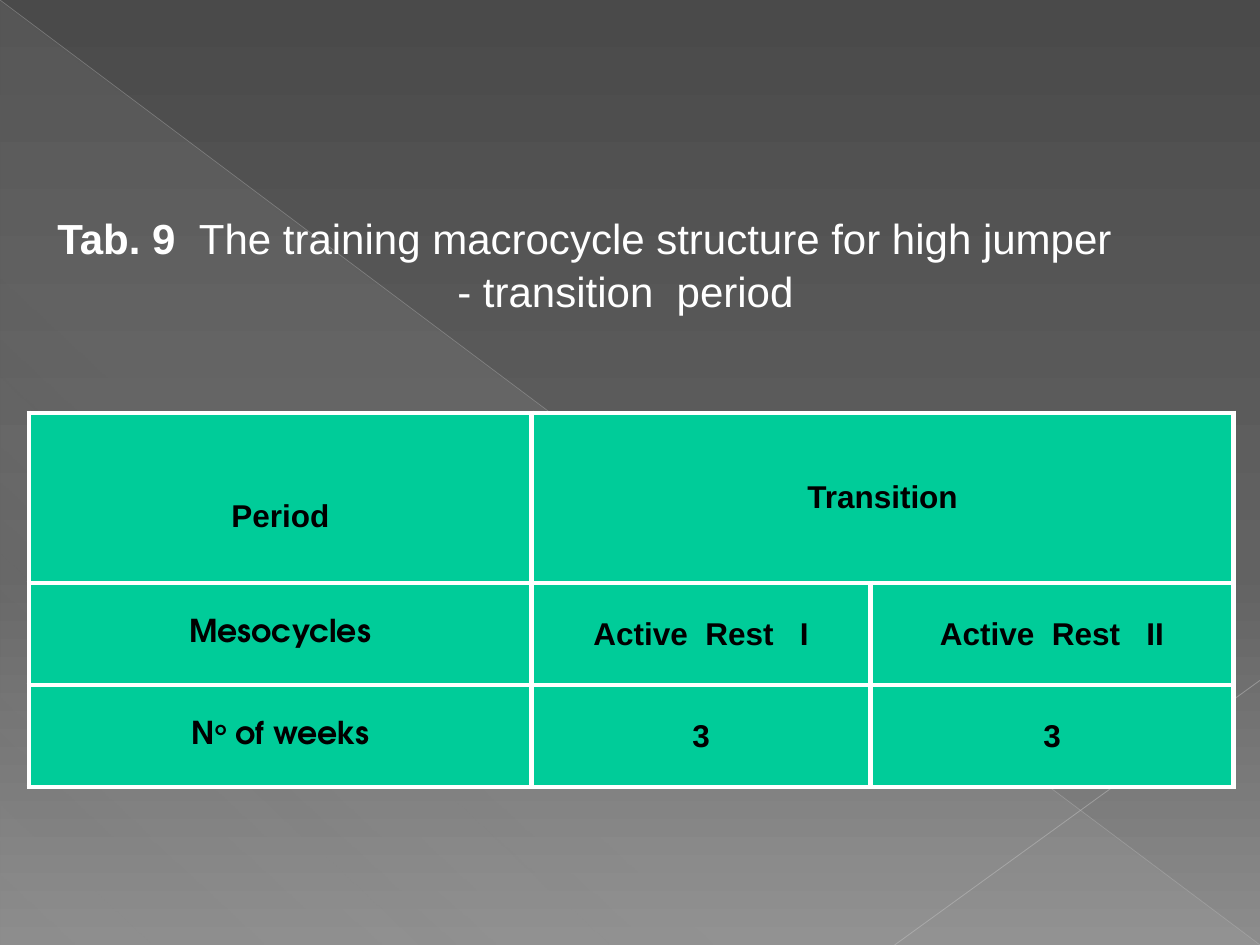
from dataclasses import dataclass
from lxml import etree
from pptx import Presentation, util as u
from pptx.dml.color import RGBColor
from pptx.enum import shapes, text
from pptx.oxml.ns import qn

WIDTH, HEIGHT = 10, 7.5
COLORS = {
    "top": "4A4A4A", "middle": "626262", "bottom": "8C8C8C",
    "veil": "D2D2D2", "diagonal": "BFBFBF", "corner": "C6C6C6",
    "cell": "00CC99", "white": "FFFFFF", "black": "000000",
}


@dataclass
class SlideBuilder:
    slide: object
    body_font: str = "Arial"
    label_font: str = "TeX Gyre Adventor"

    def x(self, share):
        return u.Inches(WIDTH * share)

    def y(self, share):
        return u.Inches(HEIGHT * share)

    def color(self, name):
        return RGBColor.from_string(COLORS[name])

    def alpha(self, color_element, percent):
        etree.SubElement(color_element, qn("a:alpha"), val=str(percent * 1000))

    def gradient(self, fill, element, stops, angle):
        fill.gradient()
        gradient = next(element.iter(qn("a:gradFill")))
        stop_list = gradient.find(qn("a:gsLst"))
        for stop in list(stop_list):
            stop_list.remove(stop)
        for position, name, opacity in stops:
            stop = etree.SubElement(stop_list, qn("a:gs"), pos=str(position * 1000))
            color = etree.SubElement(stop, qn("a:srgbClr"), val=COLORS[name])
            if opacity < 100:
                self.alpha(color, opacity)
        gradient.find(qn("a:lin")).set("ang", str(angle * 60000))

    def background(self, stops, angle):
        self.gradient(self.slide.background.fill, self.slide._element, stops, angle)

    def triangle(self, left, top, width, height, stops, angle):
        shape = self.slide.shapes.add_shape(
            shapes.MSO_SHAPE.RIGHT_TRIANGLE,
            self.x(left), self.y(top), self.x(width), self.y(height))
        shape.shadow.inherit = False
        shape.line.fill.background()
        self.gradient(shape.fill, shape._element, stops, angle)

    def line(self, start, end, name, width, opacity):
        connector = self.slide.shapes.add_connector(
            shapes.MSO_CONNECTOR.STRAIGHT,
            self.x(start[0]), self.y(start[1]), self.x(end[0]), self.y(end[1]))
        connector.line.color.rgb = self.color(name)
        connector.line.width = u.Pt(width)
        properties = connector._element.spPr
        self.alpha(next(properties.iter(qn("a:srgbClr"))), opacity)
        etree.SubElement(properties, qn("a:effectLst"))

    def run(self, paragraph, words, size, name, bold, font=None, raised=False):
        run = paragraph.add_run()
        run.text = words
        run.font.size = u.Pt(size)
        run.font.name = font or self.body_font
        run.font.bold = bold
        run.font.color.rgb = self.color(name)
        if raised:
            run.font._element.set("baseline", "30000")

    def title(self, left, top, width, height, lines, offset):
        box = self.slide.shapes.add_textbox(
            self.x(left), self.y(top), self.x(width), self.y(height))
        frame = box.text_frame
        frame.word_wrap = True
        frame.vertical_anchor = text.MSO_ANCHOR.MIDDLE
        frame.margin_right = u.Inches(0.1 + offset)
        frame.margin_bottom = u.Inches(0.46)
        for index, line in enumerate(lines):
            paragraph = frame.add_paragraph() if index else frame.paragraphs[0]
            paragraph.alignment = text.PP_ALIGN.CENTER
            if index:
                paragraph.space_before = u.Pt(1.5)
                paragraph._p.get_or_add_pPr().set("marL", str(u.Inches(offset)))
            for words, bold in line:
                self.run(paragraph, words, 24, "white", bold)

    def cell(self, cell, runs, font):
        properties = cell._tc.get_or_add_tcPr()
        for side in ("lnL", "lnR", "lnT", "lnB"):
            border = etree.SubElement(properties, qn("a:" + side), w=str(u.Pt(3)))
            fill = etree.SubElement(border, qn("a:solidFill"))
            etree.SubElement(fill, qn("a:srgbClr"), val=COLORS["white"])
        cell.fill.solid()
        cell.fill.fore_color.rgb = self.color("cell")
        cell.vertical_anchor = text.MSO_ANCHOR.MIDDLE
        paragraph = cell.text_frame.paragraphs[0]
        paragraph.alignment = text.PP_ALIGN.CENTER
        for words, raised in runs:
            self.run(paragraph, words, 18, "black", True, font, raised)

    def table(self, left, top, columns, rows, content):
        table = self.slide.shapes.add_table(
            len(rows), len(columns), self.x(left), self.y(top),
            u.Inches(sum(columns)), u.Inches(sum(rows))).table
        table.first_row = table.horz_banding = False
        for column, width in zip(table.columns, columns):
            column.width = u.Inches(width)
        for row, height in zip(table.rows, rows):
            row.height = u.Inches(height)
        for r, values in enumerate(content):
            for c, runs in enumerate(values):
                font = self.label_font if r and not c else self.body_font
                self.cell(table.cell(r, c), runs, font)
        return table


def main():
    presentation = Presentation()
    presentation.slide_width = u.Inches(WIDTH)
    presentation.slide_height = u.Inches(HEIGHT)
    builder = SlideBuilder(presentation.slides.add_slide(presentation.slide_layouts[6]))

    builder.background([(0, "top", 100), (60, "middle", 100), (100, "bottom", 100)], 90)
    builder.triangle(0, 0, 1, 1, [(0, "veil", 10), (70, "veil", 8), (100, "veil", 1)], 133)
    builder.line((0, 0), (1, 1), "diagonal", 0.39, 35)
    builder.line((1, 0.72), (0.71, 1), "corner", 0.47, 45)
    builder.title(-0.117, 0.219, 1.227, 0.175, [
        [("Tab. 9  ", True), ("The training macrocycle structure for high jumper", False)],
        [("- transition  period", False)],
    ], 0.65)

    table = builder.table(0.023, 0.437, [3.99, 2.69, 2.88], [1.35, 0.81, 0.81], [
        [[("Period", False)], [("Transition", False)], []],
        [[("Mesocycles", False)], [("Active  Rest   I", False)], [("Active  Rest   II", False)]],
        [[("N", False), ("o", True), (" of weeks", False)], [("3", False)], [("3", False)]],
    ])
    table.cell(0, 1).merge(table.cell(0, 2))
    table.cell(0, 0).margin_top = u.Inches(0.34)

    presentation.save("out.pptx")


if __name__ == "__main__":
    main()
